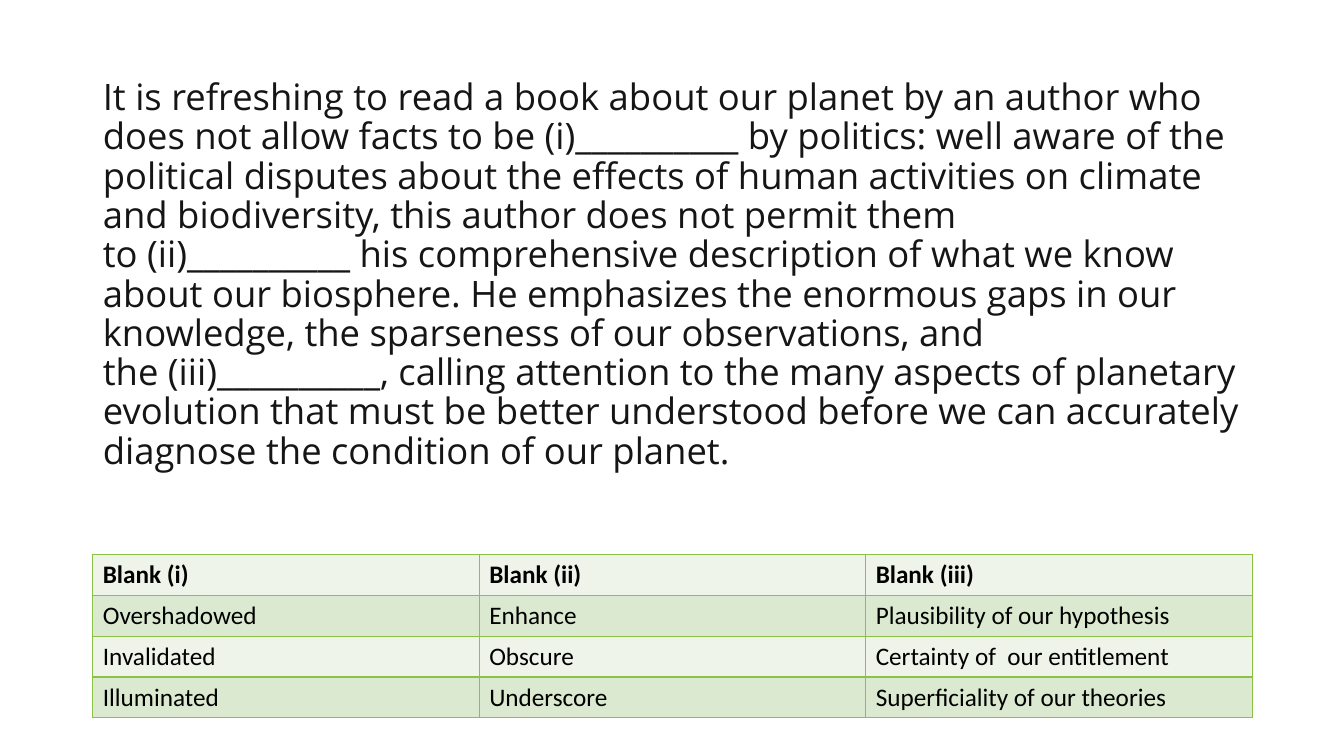
from lxml import etree
from pptx import Presentation
from pptx.dml.color import RGBColor
from pptx.enum.text import MSO_ANCHOR, MSO_AUTO_SIZE, PP_ALIGN
from pptx.oxml.ns import qn
from pptx.util import Inches, Pt

MIDDLE, LEFT, NO_FIT = MSO_ANCHOR.MIDDLE, PP_ALIGN.LEFT, MSO_AUTO_SIZE.NONE
NBSP = chr(160)  # keeps each blank with its neighbouring words
NO_STYLE = "{2D5ABB26-0587-4C30-8999-92F81FD0307C}"

# Content
PASSAGE = (
    "It is refreshing to read a book about our planet by an author who does not "
    f"allow facts to be{NBSP}(i)__________{NBSP}by politics: well aware of the "
    "political disputes about the effects of human activities on climate and "
    "biodiversity, this author does not permit them "
    f"to{NBSP}(ii)__________{NBSP}his comprehensive "
    "description of what we know about our biosphere. He emphasizes the enormous "
    "gaps in our knowledge, the sparseness of our observations, and "
    f"the{NBSP}(iii)__________,{NBSP}calling attention to the many aspects of "
    "planetary evolution that must be better understood before we can accurately "
    f"diagnose the condition of our{NBSP}planet."
)
CHOICES = [
    ("Blank (i)", "Blank (ii)", "Blank (iii)"),
    ("Overshadowed", "Enhance", "Plausibility of our hypothesis"),
    ("Invalidated", "Obscure", "Certainty of  our entitlement"),
    ("Illuminated", "Underscore", "Superficiality of our theories"),
]
BANDS = ("EEF4E9", "DAE9CF")
BORDER = "8BC145"
MARGIN, WIDTH = 0.92, 11.5
TABLE_TOP, TABLE_HEIGHT = 5.5, 1.62


def rgb(value):
    return RGBColor.from_string(value)


def set_font(p, name, size, color, bold=False):
    p.font.name, p.font.size, p.font.bold = name, Pt(size), bold
    p.font.color.rgb = rgb(color)


def add_borders(cell, color, width):
    tcPr = cell._tc.get_or_add_tcPr()
    for i, side in enumerate(("a:lnL", "a:lnR", "a:lnT", "a:lnB")):
        ln = etree.Element(qn(side), w=str(Pt(width)))
        fill = etree.SubElement(ln, qn("a:solidFill"))
        etree.SubElement(fill, qn("a:srgbClr"), val=color)
        tcPr.insert(i, ln)  # borders come before the cell fill


prs = Presentation()
prs.slide_width, prs.slide_height = Inches(13.33), Inches(7.5)
s = prs.slides.add_slide(prs.slide_layouts[5])

# Passage
title = s.shapes.title
title.left, title.top = Inches(MARGIN), Inches(2.01)
title.width, title.height = Inches(WIDTH), Inches(1.45)
tf = title.text_frame
tf.text = PASSAGE
tf.word_wrap, tf.auto_size, tf.vertical_anchor = True, NO_FIT, MIDDLE
p = tf.paragraphs[0]
p.alignment, p.line_spacing = LEFT, 0.9
set_font(p, "Open Sans", 26, "151515")

# Answer choices
table = s.shapes.add_table(
    len(CHOICES), len(CHOICES[0]), Inches(MARGIN), Inches(TABLE_TOP),
    Inches(WIDTH), Inches(TABLE_HEIGHT)).table
table._tbl.tblPr.find(qn("a:tableStyleId")).text = NO_STYLE
for r, row in enumerate(CHOICES):
    for c, text in enumerate(row):
        cell = table.cell(r, c)
        cell.text = text
        cell.fill.solid()
        cell.fill.fore_color.rgb = rgb(BANDS[r % 2])
        add_borders(cell, BORDER, 1)
        set_font(cell.text_frame.paragraphs[0], "Calibri", 18, "000000", bold=r == 0)

prs.save("out.pptx")
